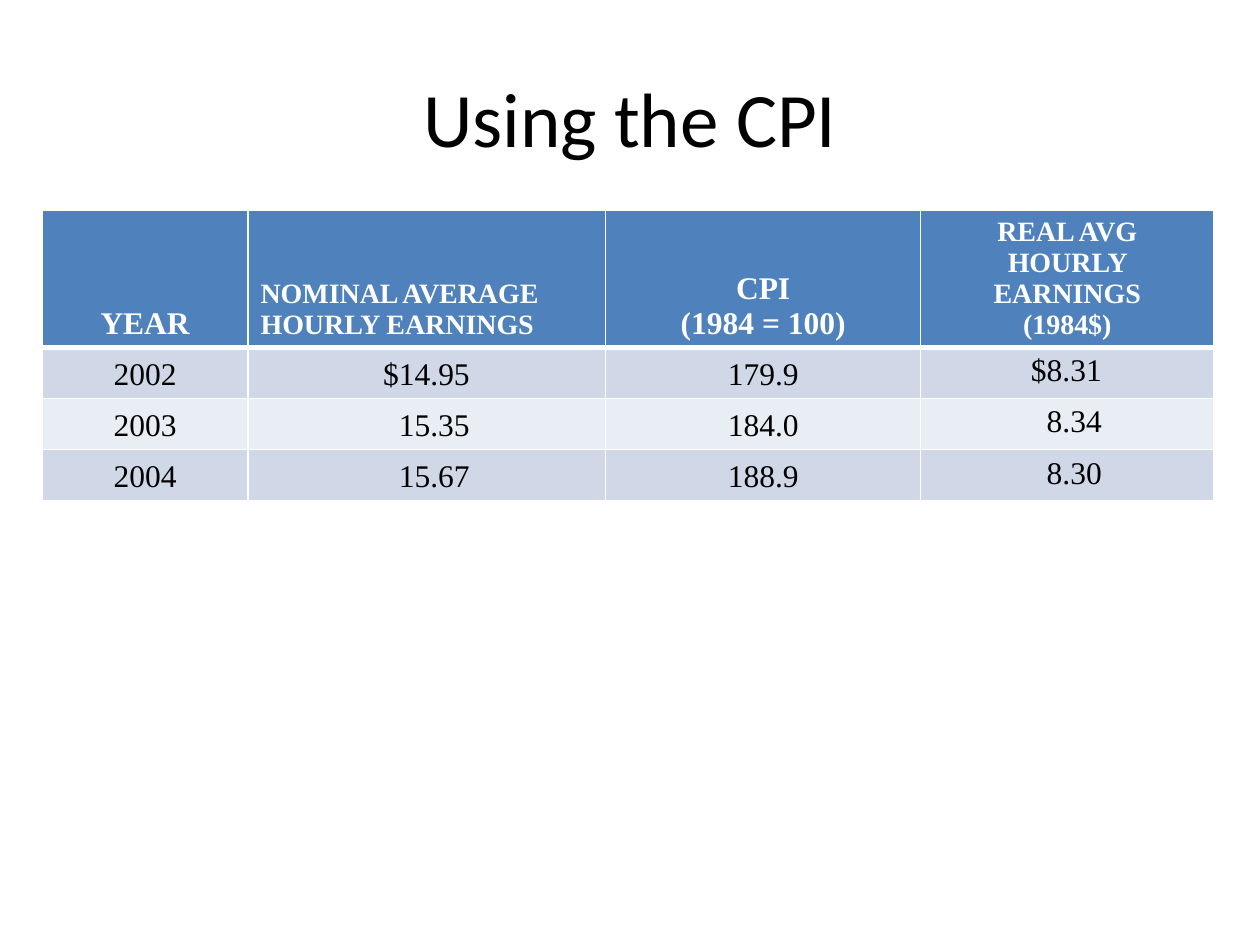
import copy
from dataclasses import dataclass

import pptx
import pptx.dml.color
import pptx.enum.text
import pptx.oxml
import pptx.oxml.ns
import pptx.table
import pptx.util

Cm = pptx.util.Cm
Pt = pptx.util.Pt
RGBColor = pptx.dml.color.RGBColor
Align = pptx.enum.text.PP_ALIGN
Anchor = pptx.enum.text.MSO_ANCHOR
qn = pptx.oxml.ns.qn

WHITE = RGBColor(0xFF, 0xFF, 0xFF)
BLACK = RGBColor(0x00, 0x00, 0x00)
BLUE = RGBColor(0x4F, 0x81, 0xBD)
BANDS = (RGBColor(0xD0, 0xD8, 0xE8), RGBColor(0xE9, 0xED, 0xF4))
SERIF = "Times New Roman"


@dataclass
class Column:
    head: str
    width: float
    size: int
    values: tuple[str, ...]
    head_align: Align = Align.CENTER
    align: Align = Align.CENTER
    inset: float = 0.25
    head_anchor: Anchor = Anchor.BOTTOM
    anchor: Anchor = Anchor.BOTTOM


COLUMNS = (
    Column("YEAR", 4.15, 18, ("2002", "2003", "2004")),
    Column("NOMINAL AVERAGE HOURLY EARNINGS", 7.21, 16, ("$14.95", "15.35", "15.67"),
           head_align=Align.LEFT, align=Align.RIGHT, inset=2.74),
    Column("CPI\n(1984 = 100)", 6.35, 18, ("179.9", "184.0", "188.9")),
    Column("REAL AVG\vHOURLY EARNINGS\n(1984$)", 5.91, 16, ("$8.31", "8.34", "8.30"),
           align=Align.RIGHT, inset=2.26, head_anchor=Anchor.TOP, anchor=Anchor.TOP),
)


def assign(target: object, form: dict) -> None:
    for name, value in form.items():
        setattr(target, name, value)


def style_text(frame: object, align: Align, form: dict, color: RGBColor) -> None:
    for para in frame.paragraphs:
        para.alignment = align
        for run in para.runs:
            assign(run.font, form)
            run.font.color.rgb = color
        for mark in para._p.findall(qn("a:br")):
            mark.append(copy.deepcopy(para.runs[0]._r.rPr))


def add_edges(cell: pptx.table._Cell, edges: dict[str, float]) -> None:
    props = cell._tc.get_or_add_tcPr()
    for side, width in edges.items():
        props.append(pptx.oxml.parse_xml(
            f'<a:ln{side} {pptx.oxml.ns.nsdecls("a")} w="{Pt(width)}">'
            f'<a:solidFill><a:srgbClr val="{WHITE}"/></a:solidFill></a:ln{side}>'))


def fill_cell(cell: pptx.table._Cell, text: str, align: Align, fill: RGBColor,
              color: RGBColor, edges: dict, font: dict, form: dict) -> None:
    add_edges(cell, edges)
    cell.fill.solid()
    cell.fill.fore_color.rgb = fill
    cell.text = text
    assign(cell, form)
    style_text(cell.text_frame, align, {"name": SERIF, **font}, color)


def draw_column(table: pptx.table.Table, index: int, col: Column) -> None:
    table.columns[index].width = Cm(col.width)
    fill_cell(table.cell(0, index), col.head, col.head_align, BLUE, WHITE,
              {"L": 1, "R": 1, "T": 1, "B": 3},
              {"size": Pt(col.size), "bold": True},
              {"vertical_anchor": col.head_anchor})
    for row, value in enumerate(col.values, 1):
        fill_cell(table.cell(row, index), value, col.align,
                  BANDS[(row - 1) % 2], BLACK,
                  {"L": 1, "R": 1, "T": 3 if row == 1 else 1, "B": 1},
                  {"size": Pt(18), "bold": False},
                  {"vertical_anchor": col.anchor, "margin_right": Cm(col.inset)})


def main() -> None:
    deck = pptx.Presentation()
    assign(deck, {"slide_width": Cm(25.4), "slide_height": Cm(19.05)})
    slide = deck.slides.add_slide(deck.slide_layouts[5])

    title = slide.shapes.title
    assign(title, {"left": Cm(1.27), "top": Cm(0.76), "width": Cm(22.86),
                   "height": Cm(3.18), "text": "Using the CPI"})
    title.text_frame.vertical_anchor = Anchor.MIDDLE
    style_text(title.text_frame, Align.CENTER,
               {"name": "Calibri", "size": Pt(44)}, BLACK)

    heights = (2.75, 1.03, 1.03, 1.03)
    table = slide.shapes.add_table(
        len(heights), len(COLUMNS), Cm(0.85), Cm(4.24),
        Cm(sum(col.width for col in COLUMNS)), Cm(sum(heights))).table
    table.horz_banding = False
    for row, height in zip(table.rows, heights):
        row.height = Cm(height)
    for index, col in enumerate(COLUMNS):
        draw_column(table, index, col)

    deck.save("out.pptx")


if __name__ == "__main__":
    main()
